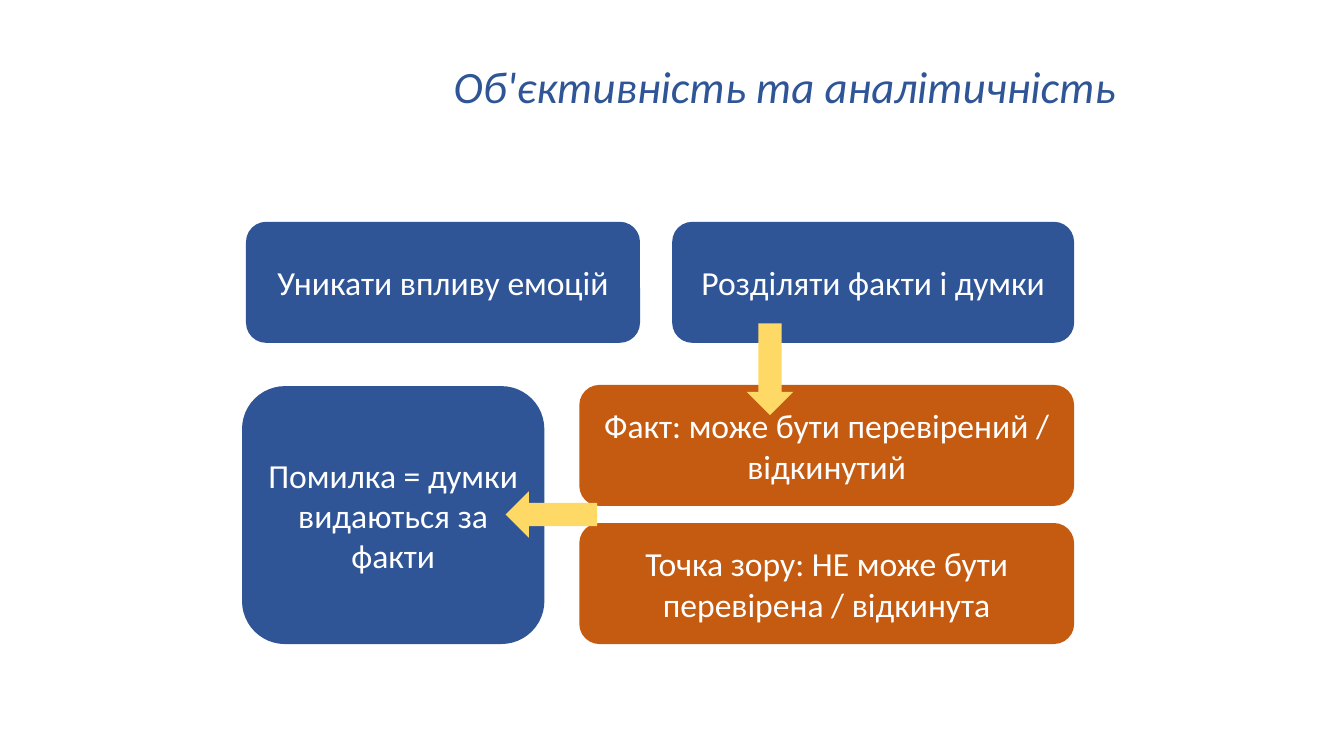
from pptx import Presentation
from pptx.dml.color import RGBColor
from pptx.enum.shapes import MSO_SHAPE as Shape
from pptx.enum.text import MSO_ANCHOR as Anchor, PP_ALIGN as Align
from pptx.util import Cm, Pt

COLOURS = {
    "blue": "2F5597",
    "orange": "C55A11",
    "yellow": "FFD966",
    "white": "FFFFFF",
}
FONT = "Calibri"


def colour(name):
    return RGBColor.from_string(COLOURS[name])


def write(frame, text, size=24, ink="white", italic=False, align=Align.CENTER, spacing=1.0):
    frame.word_wrap = True
    frame.vertical_anchor = Anchor.MIDDLE
    para = frame.paragraphs[0]
    para.alignment = align
    para.line_spacing = spacing
    span = para.add_run()
    span.text = text
    span.font.name = FONT
    span.font.size = Pt(size)
    span.font.italic = italic
    span.font.color.rgb = colour(ink)


class SlideBuilder:
    def __init__(self, deck):
        self.page = deck.slides.add_slide(deck.slide_layouts[6])

    def title(self, text, *place):
        box = self.page.shapes.add_textbox(*map(Cm, place))
        write(box.text_frame, text, size=32, ink="blue", italic=True,
              align=Align.LEFT, spacing=0.9)

    def shape(self, kind, fill, *place):
        shape = self.page.shapes.add_shape(kind, *map(Cm, place))
        shape.shadow.inherit = False
        shape.fill.solid()
        shape.fill.fore_color.rgb = colour(fill)
        shape.line.fill.background()
        return shape

    def card(self, text, fill, *place):
        box = self.shape(Shape.ROUNDED_RECTANGLE, fill, *place)
        write(box.text_frame, text)

    def arrow(self, left, top, rotation=0):
        arrow = self.shape(Shape.DOWN_ARROW, "yellow", left, top, 1.17, 2.31)
        arrow.rotation = rotation


def main():
    deck = Presentation()
    deck.slide_width, deck.slide_height = Cm(33.87), Cm(19.05)
    slide = SlideBuilder(deck)

    # Title
    slide.title("Об'єктивність та аналітичність", 11.18, 0.66, 22.66, 3.15)

    # Two principles
    row_height = 3.05
    slide.card("Уникати впливу емоцій", "blue", 6.2, 5.59, 9.93, row_height)
    slide.card("Розділяти факти і думки", "blue", 16.94, 5.59, 10.13, row_height)

    # Fact and point of view
    statements = {
        9.7: "Факт: може бути перевірений / відкинутий",
        13.18: "Точка зору: НЕ може бути перевірена / відкинута",
    }
    for top, text in statements.items():
        slide.card(text, "orange", 14.6, top, 12.47, row_height)

    # Typical mistake
    slide.card("Помилка = думки видаються за факти", "blue", 6.1, 9.73, 7.62, 6.5)

    # Arrows: down to the statements, then left to the mistake
    slide.arrow(18.82, 8.15)
    slide.arrow(13.31, 11.81, rotation=90)

    deck.save("out.pptx")


if __name__ == "__main__":
    main()
